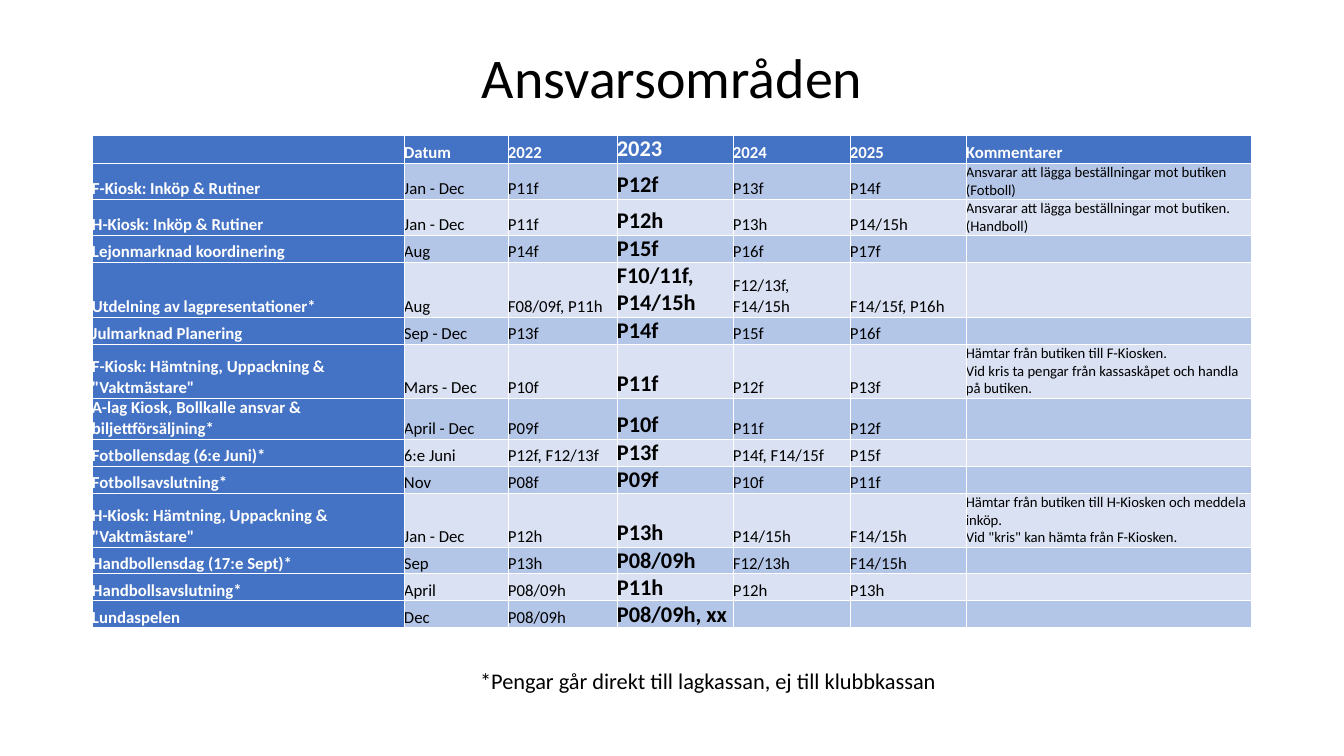
from lxml import etree
from pptx import Presentation
from pptx.dml.color import RGBColor
from pptx.enum.text import MSO_ANCHOR, PP_ALIGN
from pptx.oxml.ns import qn
from pptx.util import Pt

MIDDLE, BOTTOM, CENTER = MSO_ANCHOR.MIDDLE, MSO_ANCHOR.BOTTOM, PP_ALIGN.CENTER
PX = 914400 / 100.8
COLORS = {
    "white": "FFFFFF",
    "black": "000000",
    "header": "4472C4",
    "band_dark": "B4C6E7",
    "band_light": "D9E1F2",
}


def px(length):
    return round(length * PX)


def format_runs(paragraph, size, color, bold=False):
    for run in paragraph.runs:
        for name, value in {"name": "Calibri", "size": Pt(size), "bold": bold}.items():
            setattr(run.font, name, value)
        run.font.color.rgb = RGBColor.from_string(COLORS[color])


presentation = Presentation()
presentation.slide_width, presentation.slide_height = px(1344), px(756)
slide = presentation.slides.add_slide(presentation.slide_layouts[6])

texts = [
    ("Ansvarsområden", (111, 19, 1122, 123), 40, 0),
    ("*Pengar går direkt till lagkassan, ej till klubbkassan", (147, 640, 1122, 85), 16, 10),
]
for text, box, size, space_before in texts:
    text_frame = slide.shapes.add_textbox(*map(px, box)).text_frame
    text_frame.word_wrap = True
    text_frame.vertical_anchor = MIDDLE
    paragraph = text_frame.paragraphs[0]
    paragraph.text = text
    paragraph_format = {"alignment": CENTER, "line_spacing": 0.9, "space_before": Pt(space_before)}
    for name, value in paragraph_format.items():
        setattr(paragraph, name, value)
    format_runs(paragraph, size, "black")

column_widths = [312, 104, 109, 116, 117, 116, 285]
rows = [
    (28, "", "Datum", "2022", "2023", "2024", "2025", "Kommentarer"),
    (36, "F-Kiosk: Inköp & Rutiner", "Jan - Dec", "P11f", "P12f", "P13f", "P14f",
     "Ansvarar att lägga beställningar mot butiken (Fotboll)"),
    (36, "H-Kiosk: Inköp & Rutiner", "Jan - Dec", "P11f", "P12h", "P13h", "P14/15h",
     "Ansvarar att lägga beställningar mot butiken. (Handboll)"),
    (27, "Lejonmarknad koordinering", "Aug", "P14f", "P15f", "P16f", "P17f", ""),
    (55, "Utdelning av lagpresentationer*", "Aug", "F08/09f, P11h", "F10/11f, P14/15h",
     "F12/13f, F14/15h", "F14/15f, P16h", ""),
    (27, "Julmarknad Planering", "Sep - Dec", "P13f", "P14f", "P15f", "P16f", ""),
    (54, 'F-Kiosk: Hämtning, Uppackning & "Vaktmästare"', "Mars - Dec", "P10f", "P11f", "P12f", "P13f",
     "Hämtar från butiken till F-Kiosken.\nVid kris ta pengar från kassaskåpet och handla på butiken."),
    (41, "A-lag Kiosk, Bollkalle ansvar & biljettförsäljning*", "April - Dec",
     "P09f", "P10f", "P11f", "P12f", ""),
    (27, "Fotbollensdag (6:e Juni)*", "6:e Juni", "P12f, F12/13f", "P13f", "P14f, F14/15f", "P15f", ""),
    (27, "Fotbollsavslutning*", "Nov", "P08f", "P09f", "P10f", "P11f", ""),
    (54, 'H-Kiosk: Hämtning, Uppackning & "Vaktmästare"', "Jan - Dec", "P12h", "P13h", "P14/15h", "F14/15h",
     'Hämtar från butiken till H-Kiosken och meddela inköp.\nVid "kris" kan hämta från F-Kiosken.'),
    (27, "Handbollensdag (17:e Sept)*", "Sep", "P13h", "P08/09h", "F12/13h", "F14/15h", ""),
    (27, "Handbollsavslutning*", "April", "P08/09h", "P11h", "P12h", "P13h", ""),
    (27, "Lundaspelen", "Dec", "P08/09h", "P08/09h, xx", "", "", ""),
]
current_year, comments = 3, 6
table_height = sum(row[0] for row in rows)
table = slide.shapes.add_table(
    len(rows), len(column_widths), px(92), px(135), px(sum(column_widths)), px(table_height)
).table
table.first_row = table.horz_banding = False
for column, width in zip(table.columns, column_widths):
    column.width = px(width)

cell_format = {"margin_left": 0, "margin_right": 0, "margin_top": 0, "margin_bottom": 0,
               "vertical_anchor": BOTTOM}
for row_index, (height, *values) in enumerate(rows):
    table.rows[row_index].height = px(height)
    for column_index, value in enumerate(values):
        cell = table.cell(row_index, column_index)
        for name, setting in cell_format.items():
            setattr(cell, name, setting)

        is_header = row_index == 0 or column_index == 0
        band = "band_dark" if row_index % 2 else "band_light"
        cell.fill.solid()
        cell.fill.fore_color.rgb = RGBColor.from_string(COLORS["header" if is_header else band])
        properties = cell._tc.get_or_add_tcPr()
        for position, side in enumerate(("a:lnL", "a:lnR", "a:lnT", "a:lnB")):
            line = etree.Element(qn(side), w=str(Pt(0.5)))
            line_fill = etree.SubElement(line, qn("a:solidFill"))
            etree.SubElement(line_fill, qn("a:srgbClr"), val=COLORS["white"])
            properties.insert(position, line)

        size = 12
        if column_index == current_year:
            size = 16
        elif column_index == comments and row_index > 0:
            size = 10.5
        paragraph = cell.text_frame.paragraphs[0]
        if value:
            paragraph.text = value
            format_runs(paragraph, size, "white" if is_header else "black",
                        is_header or column_index == current_year)
        else:
            paragraph._p.get_or_add_endParaRPr().set("sz", str(int(size * 100)))

presentation.save("out.pptx")
